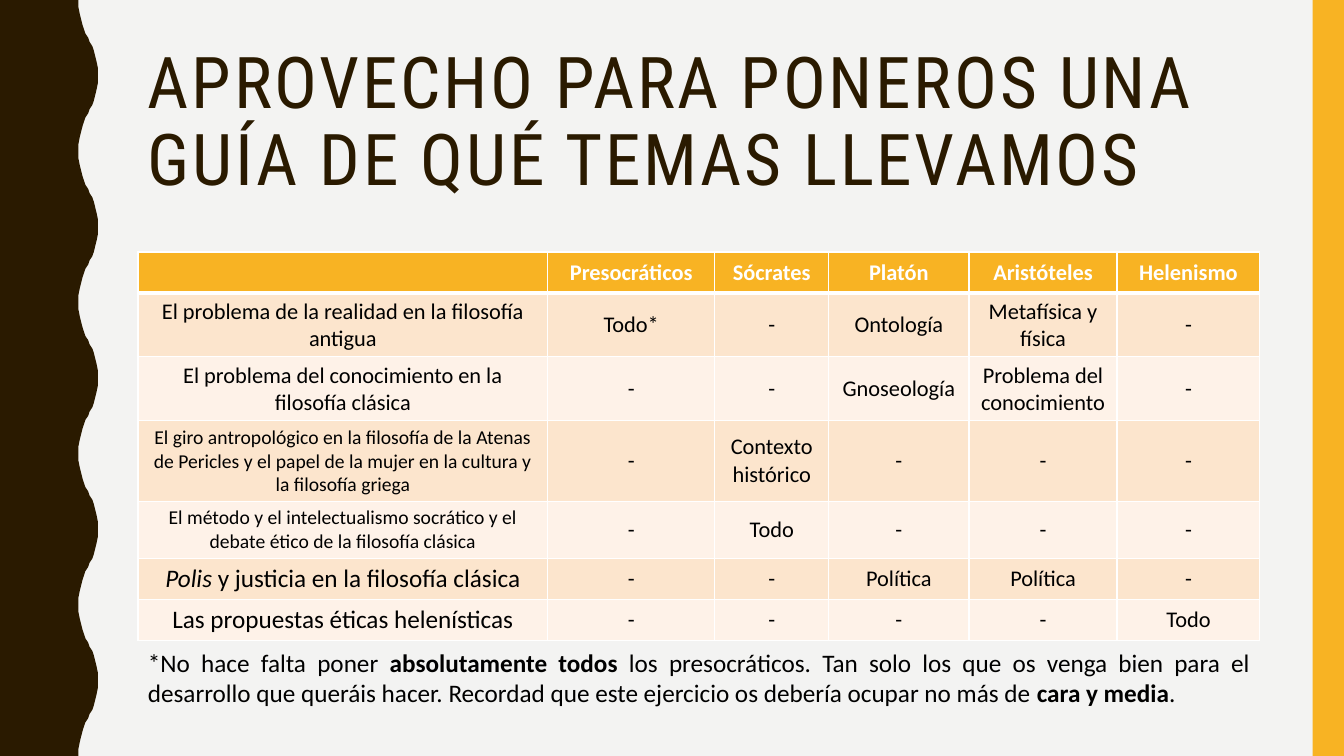
from lxml import etree
from pptx import Presentation
from pptx.dml.color import RGBColor
from pptx.enum.shapes import MSO_SHAPE
from pptx.enum.text import MSO_ANCHOR, PP_ALIGN
from pptx.oxml.ns import qn
from pptx.util import Pt

RECT = MSO_SHAPE.RECTANGLE
MIDDLE, TOP = MSO_ANCHOR.MIDDLE, MSO_ANCHOR.TOP
LEFT, CENTER, JUSTIFY = PP_ALIGN.LEFT, PP_ALIGN.CENTER, PP_ALIGN.JUSTIFY

# Content: a text is a list of (words, style) runs
TITLE = [("APROVECHO PARA PONEROS UNA GUÍA DE QUÉ TEMAS LLEVAMOS", "")]
HEADER = ["", "Presocráticos", "Sócrates", "Platón", "Aristóteles", "Helenismo"]
TOPICS = [  # size of the topic, topic, one entry per school
    (16, [("El problema de la realidad en la filosofía antigua", "")],
     ["Todo*", "-", "Ontología", "Metafísica y física", "-"]),
    (16, [("El problema del conocimiento en la filosofía clásica", "")],
     ["-", "-", "Gnoseología", "Problema del conocimiento", "-"]),
    (14, [("El giro antropológico en la filosofía de la Atenas de Pericles "
           "y el papel de la mujer en la cultura y la filosofía griega", "")],
     ["-", "Contexto histórico", "-", "-", "-"]),
    (14, [("El método y el intelectualismo socrático y el debate ético "
           "de la filosofía clásica", "")],
     ["-", "Todo", "-", "-", "-"]),
    (18, [("Polis", "italic"), (" y justicia en la filosofía clásica", "")],
     ["-", "-", "Política", "Política", "-"]),
    (18, [("Las propuestas éticas helenísticas", "")],
     ["-", "-", "-", "-", "Todo"]),
]
NOTE = [
    ("*No hace falta poner ", ""),
    ("absolutamente todos", "bold"),
    (" los presocráticos. Tan solo los que os venga bien para el desarrollo que "
     "queráis hacer. Recordad que este ejercicio os debería ocupar no más de ", ""),
    ("cara y media", "bold"),
    (".", ""),
]

COLORS = {"back": "F3F3F2", "dark": "2A1A00", "gold": "F8B323", "white": "FFFFFF",
          "black": "000000", "odd": "FCE5CD", "even": "FEF2E8"}

# Layout
WIDTH, HEIGHT = 960, 540
MARGIN, BODY_WIDTH = 98.6, 801.4
TABLE_TOP, TABLE_HEIGHT, ROW_HEIGHT = 180, 277.2, 29.2
COL_WIDTHS = [292.6, 119.4, 81.4, 100.2, 105.8, 102]
STRIPE_WIDTH = 22.4
WAVE_PERIOD = 108
HALF_WAVE = [(56, 0), (56.2, 5), (56.8, 10), (57.5, 14.4), (58.6, 18), (59.9, 21),
             (61.2, 24), (62.7, 27), (64.1, 30), (65.5, 33), (66.8, 36),
             (68.2, 39.6), (69.2, 44), (69.8, 49), (70, 54)]


def rgb(name):
    return RGBColor.from_string(COLORS[name])


def paint(s, color):
    s.shadow.inherit = False
    s.fill.solid()
    s.fill.fore_color.rgb = rgb(color)
    s.line.fill.background()


def write(tf, runs, size, color, align, font="Calibri", bold=False):
    p = tf.paragraphs[0]
    p.alignment = align
    p.font.size, p.font.name, p.font.bold = Pt(size), font, bold
    p.font.color.rgb = rgb(color)
    for words, style in runs:
        r = p.add_run()
        r.text = words
        if style:
            setattr(r.font, style, True)
    return p


def add_text(top, height, anchor, *args, **kwargs):
    tf = slide.shapes.add_textbox(Pt(MARGIN), Pt(top), Pt(BODY_WIDTH),
                                  Pt(height)).text_frame
    tf.word_wrap = True
    tf.vertical_anchor = anchor
    return write(tf, *args, **kwargs)


def set_borders(cell, top, bottom):
    tcPr = cell._tc.get_or_add_tcPr()
    sides = [("L", 1), ("R", 1), ("T", top), ("B", bottom)]
    for i, (side, width) in enumerate(sides):
        ln = etree.Element(qn("a:ln" + side), w=str(Pt(width)))
        fill = etree.SubElement(ln, qn("a:solidFill"))
        etree.SubElement(fill, qn("a:srgbClr"), val=COLORS["white"])
        tcPr.insert(i, ln)


def fill_cell(cell, row, runs, size):
    head = row == 0
    cell.vertical_anchor = MIDDLE
    cell.fill.solid()
    cell.fill.fore_color.rgb = rgb("gold" if head else "odd" if row % 2 else "even")
    set_borders(cell, 3 if row == 1 else 1, 3 if head else 1)
    write(cell.text_frame, runs, size, "white" if head else "black", CENTER, bold=head)


prs = Presentation()
prs.slide_width, prs.slide_height = Pt(WIDTH), Pt(HEIGHT)
slide = prs.slides.add_slide(prs.slide_layouts[6])
slide.background.fill.solid()
slide.background.fill.fore_color.rgb = rgb("back")

# Wavy left edge: a half wave, its mirror, repeated down the slide
wave = HALF_WAVE + [(x, WAVE_PERIOD - y) for x, y in HALF_WAVE[-2::-1]]
edge = [(x, y + start) for start in range(0, HEIGHT, WAVE_PERIOD) for x, y in wave]
builder = slide.shapes.build_freeform(0, 0, scale=Pt(1))
builder.add_line_segments(edge + [(0, HEIGHT)], close=True)
paint(builder.convert_to_shape(), "dark")

# Right stripe
paint(slide.shapes.add_shape(RECT, Pt(WIDTH - STRIPE_WIDTH), 0, Pt(STRIPE_WIDTH),
                             Pt(HEIGHT)), "gold")

# Title
p = add_text(30, 117.4, MIDDLE, TITLE, 51, "dark", LEFT, font="Roboto Condensed")
p.line_spacing = 0.9
p.runs[0].font._element.set("spc", "200")

# Table of topics by school
frame = slide.shapes.add_table(len(TOPICS) + 1, len(HEADER), Pt(MARGIN), Pt(TABLE_TOP),
                               Pt(BODY_WIDTH), Pt(TABLE_HEIGHT))
table = frame.table
for column, width in zip(table.columns, COL_WIDTHS):
    column.width = Pt(width)
for row in table.rows:
    row.height = Pt(ROW_HEIGHT)
frame.height = Pt(TABLE_HEIGHT)
for col, name in enumerate(HEADER):
    fill_cell(table.cell(0, col), 0, [(name, "")] if name else [], 16)
for row, (size, topic, entries) in enumerate(TOPICS, 1):
    fill_cell(table.cell(row, 0), row, topic, size)
    for col, entry in enumerate(entries, 1):
        fill_cell(table.cell(row, col), row, [(entry, "")], 16)

# Footnote
add_text(458.6, 51, TOP, NOTE, 18, "black", JUSTIFY)

prs.save("out.pptx")
